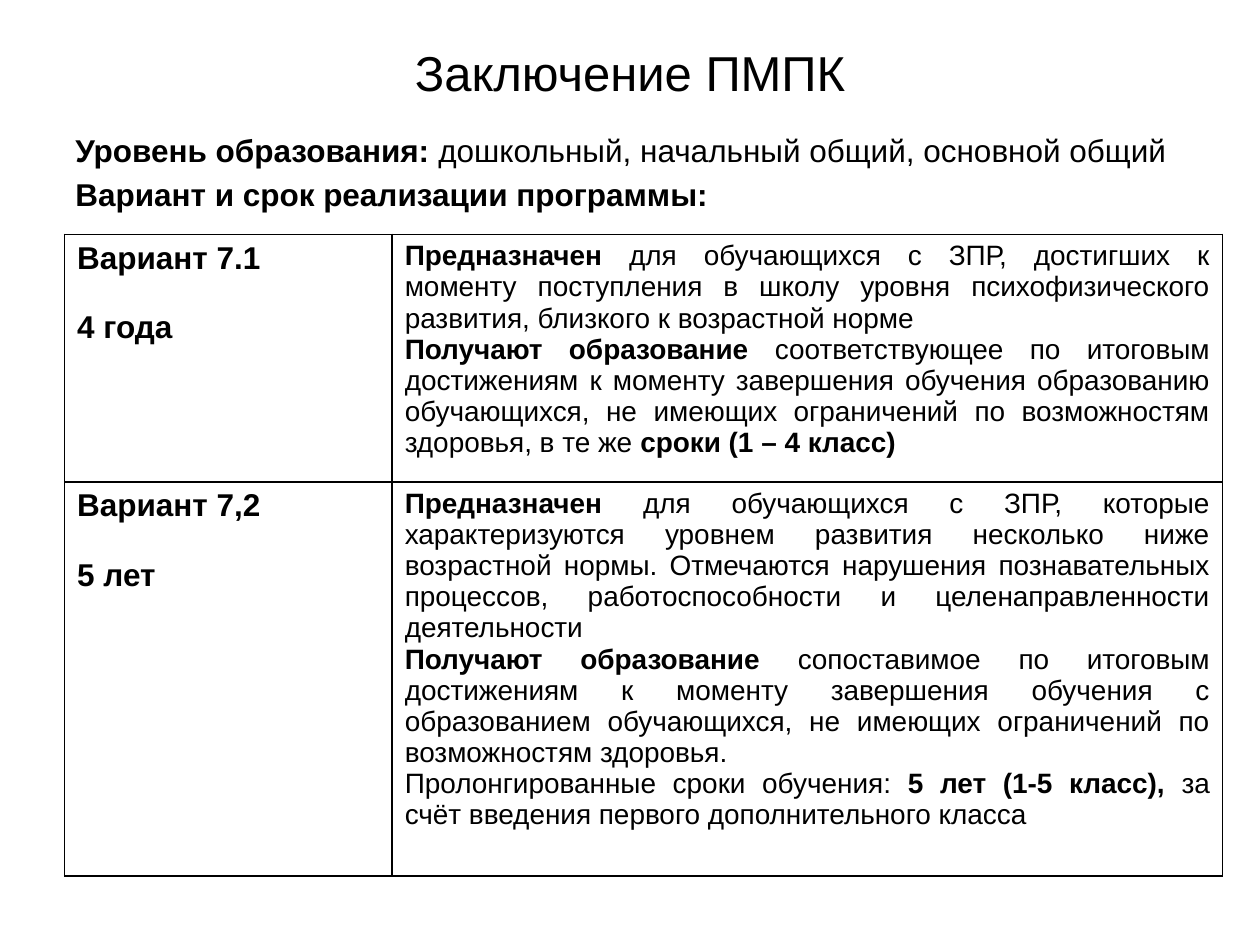
from lxml.etree import SubElement
from pptx import Presentation
from pptx.dml.color import RGBColor
from pptx.enum.text import MSO_ANCHOR, PP_ALIGN
from pptx.oxml.ns import qn
from pptx.util import Pt

BLACK = "000000"


def color(value):
    return RGBColor.from_string(value)


def add_text(tf, paragraphs, size, align=PP_ALIGN.LEFT, before=0, gap=0):
    """Each paragraph is a list of (text, bold) runs."""
    for i, runs in enumerate(paragraphs):
        p = tf.add_paragraph() if i else tf.paragraphs[0]
        p.alignment = align
        p.space_before = Pt(gap if i else before)
        for text, bold in runs:
            r = p.add_run()
            r.text = text
            r.font.name = "Arial"
            r.font.size = Pt(size)
            r.font.bold = bold
            r.font.color.rgb = color(BLACK)


prs = Presentation()
prs.slide_width, prs.slide_height = Pt(720), Pt(540)
s = prs.slides.add_slide(prs.slide_layouts[6])

# Title
tf = s.shapes.add_textbox(Pt(36), Pt(21.6), Pt(648), Pt(39)).text_frame
tf.word_wrap = True
tf.vertical_anchor = MSO_ANCHOR.MIDDLE
add_text(tf, [[("Заключение ПМПК", False)]], 28, PP_ALIGN.CENTER)

# Introduction
tf = s.shapes.add_textbox(Pt(36), Pt(71.3), Pt(648), Pt(56)).text_frame
tf.word_wrap = True
intro = [
    [("Уровень образования: ", True),
     ("дошкольный, начальный общий, основной общий", False)],
    [("Вариант и срок реализации программы:", True)],
]
add_text(tf, intro, 18, before=3.6, gap=3.6)

# Programme variants: name, duration, description
variants = [
    ("Вариант 7.1", "4 года", [
        [("Предназначен", True),
         (" для обучающихся с ЗПР, достигших к моменту поступления в школу "
          "уровня психофизического развития, близкого к возрастной норме", False)],
        [("Получают образование ", True),
         ("соответствующее по итоговым достижениям к моменту завершения "
          "обучения образованию обучающихся, не имеющих ограничений по "
          "возможностям здоровья, в те же ", False),
         ("сроки (1 – 4 класс)", True)],
    ]),
    ("Вариант 7,2", "5 лет", [
        [("Предназначен ", True),
         ("для обучающихся с ЗПР, которые характеризуются уровнем развития "
          "несколько ниже возрастной нормы. Отмечаются нарушения "
          "познавательных процессов, работоспособности и "
          "целенаправленности деятельности", False)],
        [("Получают образование ", True),
         ("сопоставимое по итоговым достижениям к моменту завершения обучения "
          "с образованием обучающихся, не имеющих ограничений по "
          "возможностям здоровья.", False)],
        [("Пролонгированные сроки обучения: ", False),
         ("5 лет (1-5 класс), ", True),
         ("за счёт введения первого дополнительного класса", False)],
    ]),
]
widths, heights = [187.2, 474.5], [131.4, 225]
table = s.shapes.add_table(len(heights), len(widths), Pt(36.9), Pt(133.9),
                           Pt(sum(widths)), Pt(sum(heights))).table
table.first_row = table.horz_banding = False
for column, width in zip(table.columns, widths):
    column.width = Pt(width)
for row, height, (name, years, description) in zip(table.rows, heights, variants):
    row.height = Pt(height)
    left, right = row.cells
    add_text(left.text_frame, [[(name, True)], [(years, True)]], 18, gap=19.6)
    add_text(right.text_frame, description, 16, PP_ALIGN.JUSTIFY)

# Cell borders come before the fill in the cell properties
for cell in table.iter_cells():
    tcPr = cell._tc.get_or_add_tcPr()
    for side in ("a:lnL", "a:lnR", "a:lnT", "a:lnB"):
        ln = SubElement(tcPr, qn(side), w=str(Pt(1)))
        SubElement(SubElement(ln, qn("a:solidFill")), qn("a:srgbClr"), val=BLACK)
    cell.fill.background()

prs.save("out.pptx")
